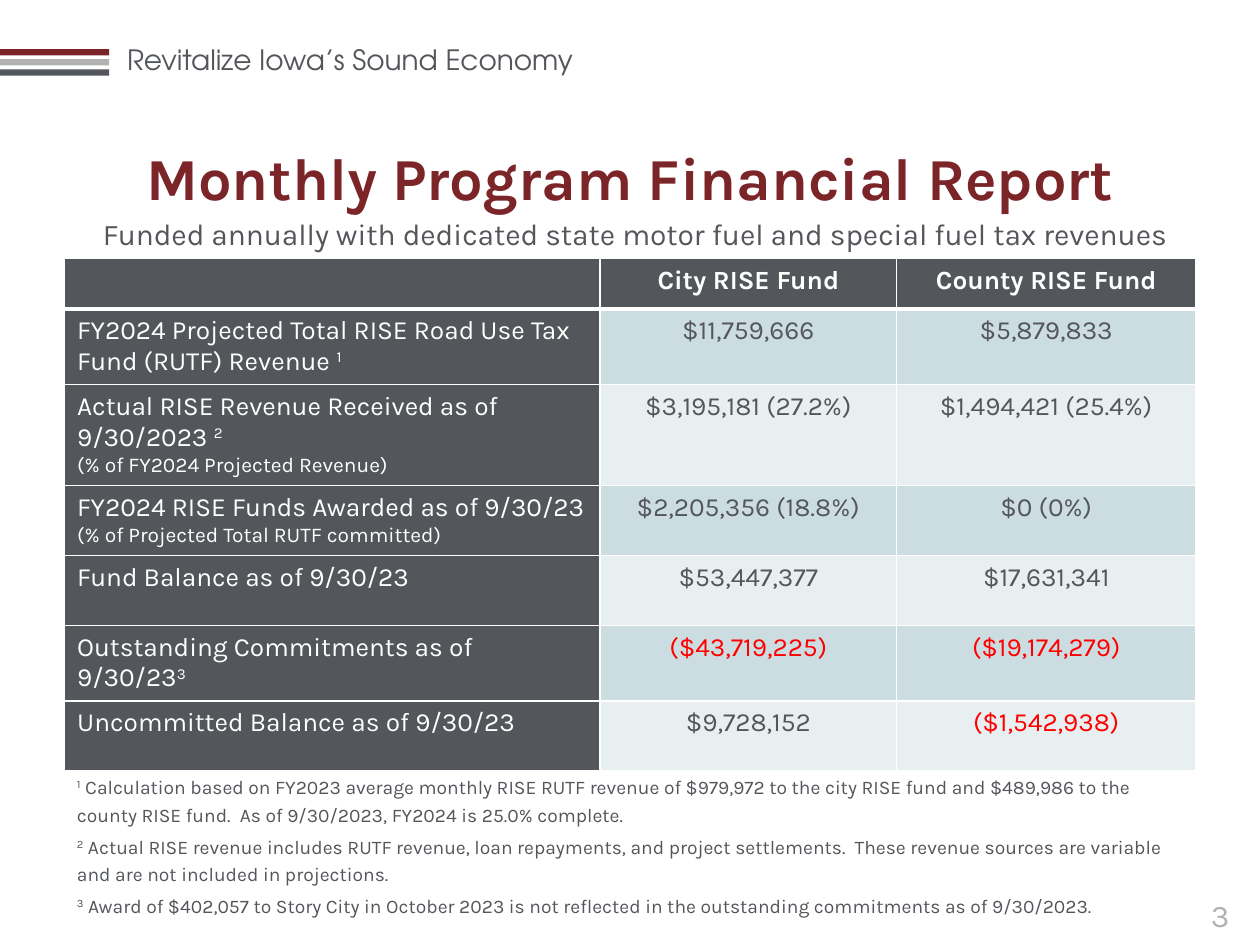
import dataclasses

import lxml.etree
import pptx
import pptx.dml.color
import pptx.enum.shapes
import pptx.enum.text
import pptx.oxml.ns
import pptx.util

Pt = pptx.util.Pt
Align = pptx.enum.text.PP_ALIGN
Anchor = pptx.enum.text.MSO_ANCHOR

MAROON = "7C2529"
SILVER = "B1B3B3"
SLATE = "53565A"
WHITE = "FFFFFF"
RED = "FF0000"
BANDS = ("CCDDE2", "E7EFF1")
LABEL_SIZE = 15
NOTE_SIZE = 12


@dataclasses.dataclass(frozen=True)
class FundRow:
    label: str
    city: str
    county: str
    note: str = ""


FUND_ROWS = (
    FundRow("FY2024 Projected Total RISE Road Use Tax Fund (RUTF) Revenue ^1", "$11,759,666", "$5,879,833"),
    FundRow(
        "Actual RISE Revenue Received as of 9/30/2023 ^2",
        "$3,195,181 (27.2%)",
        "$1,494,421 (25.4%)",
        "(% of FY2024 Projected Revenue)",
    ),
    FundRow(
        "FY2024 RISE Funds Awarded as of 9/30/23",
        "$2,205,356 (18.8%)",
        "$0 (0%)",
        "(% of Projected Total RUTF committed)",
    ),
    FundRow("Fund Balance as of 9/30/23", "$53,447,377", "$17,631,341"),
    FundRow("Outstanding Commitments as of 9/30/23^3", "($43,719,225)", "($19,174,279)"),
    FundRow("Uncommitted Balance as of 9/30/23", "$9,728,152", "($1,542,938)"),
)

FOOTNOTES = (
    "^1^ Calculation based on FY2023 average monthly RISE RUTF revenue of $979,972 to the city RISE fund "
    "and $489,986 to the county RISE fund.  As of 9/30/2023, FY2024 is 25.0% complete.",
    "^2^ Actual RISE revenue includes RUTF revenue, loan repayments, and project settlements.  "
    "These revenue sources are variable and are not included in projections.",
    "^3^ Award of $402,057 to Story City in October 2023 is not reflected in the outstanding commitments "
    "as of 9/30/2023.",
)


def color(code: str) -> pptx.dml.color.RGBColor:
    return pptx.dml.color.RGBColor.from_string(code)


def write(para, text: str, *, size: float, ink: str = SLATE, font: str = "Karla",
          bold: bool = False, align=Align.LEFT) -> None:
    para.alignment = align
    for index, part in enumerate(text.split("^")):
        if text and not part:
            continue
        span = para.add_run()
        span.text = part
        span.font.name = font
        span.font.size = Pt(size)
        span.font.bold = bold
        span.font.color.rgb = color(ink)
        if index % 2:
            span._r.get_or_add_rPr().set("baseline", "30000")


def add_box(page, left: float, top: float, width: float, height: float, *, anchor=Anchor.TOP):
    box = page.shapes.add_textbox(Pt(left), Pt(top), Pt(width), Pt(height))
    box.text_frame.word_wrap = True
    box.text_frame.vertical_anchor = anchor
    return box.text_frame


def add_stripe(page, top: float, fill: str) -> None:
    stripe = page.shapes.add_shape(
        pptx.enum.shapes.MSO_SHAPE.RECTANGLE, Pt(0), Pt(top), Pt(62.4), Pt(3.6))
    stripe.shadow.inherit = False
    stripe.fill.solid()
    stripe.fill.fore_color.rgb = color(fill)
    stripe.line.fill.background()


def style_cell(cell, fill: str, *, top: float = 1, bottom: float = 1) -> None:
    cell.fill.solid()
    cell.fill.fore_color.rgb = color(fill)
    properties = cell._tc.get_or_add_tcPr()
    qualified = pptx.oxml.ns.qn
    for index, (side, width) in enumerate((("L", 1), ("R", 1), ("T", top), ("B", bottom))):
        line = lxml.etree.Element(qualified(f"a:ln{side}"), w=str(Pt(width)))
        solid = lxml.etree.SubElement(line, qualified("a:solidFill"))
        lxml.etree.SubElement(solid, qualified("a:srgbClr"), val=WHITE)
        properties.insert(index, line)


def add_fund_table(page) -> None:
    widths = (306, 169.5, 171)
    heights = (28,) + (40,) * len(FUND_ROWS)
    table = page.shapes.add_table(
        len(heights), len(widths), Pt(36.9), Pt(147.8), Pt(sum(widths)), Pt(sum(heights))).table
    for column, width in zip(table.columns, widths):
        column.width = Pt(width)
    for row, height in zip(table.rows, heights):
        row.height = Pt(height)

    for index, heading in enumerate(("", "City RISE Fund", "County RISE Fund")):
        cell = table.cell(0, index)
        style_cell(cell, SLATE, bottom=3)
        write(cell.text_frame.paragraphs[0], heading, size=LABEL_SIZE, ink=WHITE, bold=True, align=Align.CENTER)

    for index, fund in enumerate(FUND_ROWS):
        top = 1 if index else 3
        label = table.cell(index + 1, 0)
        style_cell(label, SLATE, top=top)
        write(label.text_frame.paragraphs[0], fund.label, size=LABEL_SIZE, ink=WHITE)
        if fund.note:
            write(label.text_frame.add_paragraph(), fund.note, size=NOTE_SIZE, ink=WHITE)
        for column, amount in enumerate((fund.city, fund.county), start=1):
            cell = table.cell(index + 1, column)
            style_cell(cell, BANDS[index % 2], top=top)
            ink = RED if amount.startswith("(") else SLATE
            write(cell.text_frame.paragraphs[0], amount, size=LABEL_SIZE, ink=ink, align=Align.CENTER)


def add_footnotes(page) -> None:
    frame = add_box(page, 36.9, 437, 646.5, 96.5)
    for index, footnote in enumerate(FOOTNOTES):
        para = frame.add_paragraph() if index else frame.paragraphs[0]
        para.line_spacing = 1.2
        if index:
            para.space_before = Pt(2.2)
        write(para, footnote, size=11)


def main() -> None:
    deck = pptx.Presentation()
    deck.slide_width, deck.slide_height = Pt(720), Pt(540)
    page = deck.slides.add_slide(deck.slide_layouts[6])

    banner = add_box(page, 65.5, 20.9, 294.5, 26.6)
    write(banner.paragraphs[0], "Revitalize Iowa’s Sound Economy", size=16, font="TeX Gyre Adventor")
    for index, fill in enumerate((MAROON, SILVER, SLATE)):
        add_stripe(page, 28.1 + index * 5.75, fill)
    number = add_box(page, 666, 508.3, 62.6, 28.8)
    write(number.paragraphs[0], "3", size=18, ink=SILVER, align=Align.CENTER)

    add_footnotes(page)
    title = add_box(page, 8.6, 87.1, 702.8, 28.1, anchor=Anchor.MIDDLE)
    write(title.paragraphs[0], "Monthly Program Financial Report",
          size=34, ink=MAROON, bold=True, align=Align.CENTER)
    add_fund_table(page)
    subtitle = add_box(page, 39.6, 119.5, 646.5, 28.1)
    write(subtitle.paragraphs[0],
          "Funded annually with dedicated state motor fuel and special fuel tax revenues",
          size=17.1, align=Align.CENTER)

    deck.save("out.pptx")


if __name__ == "__main__":
    main()
